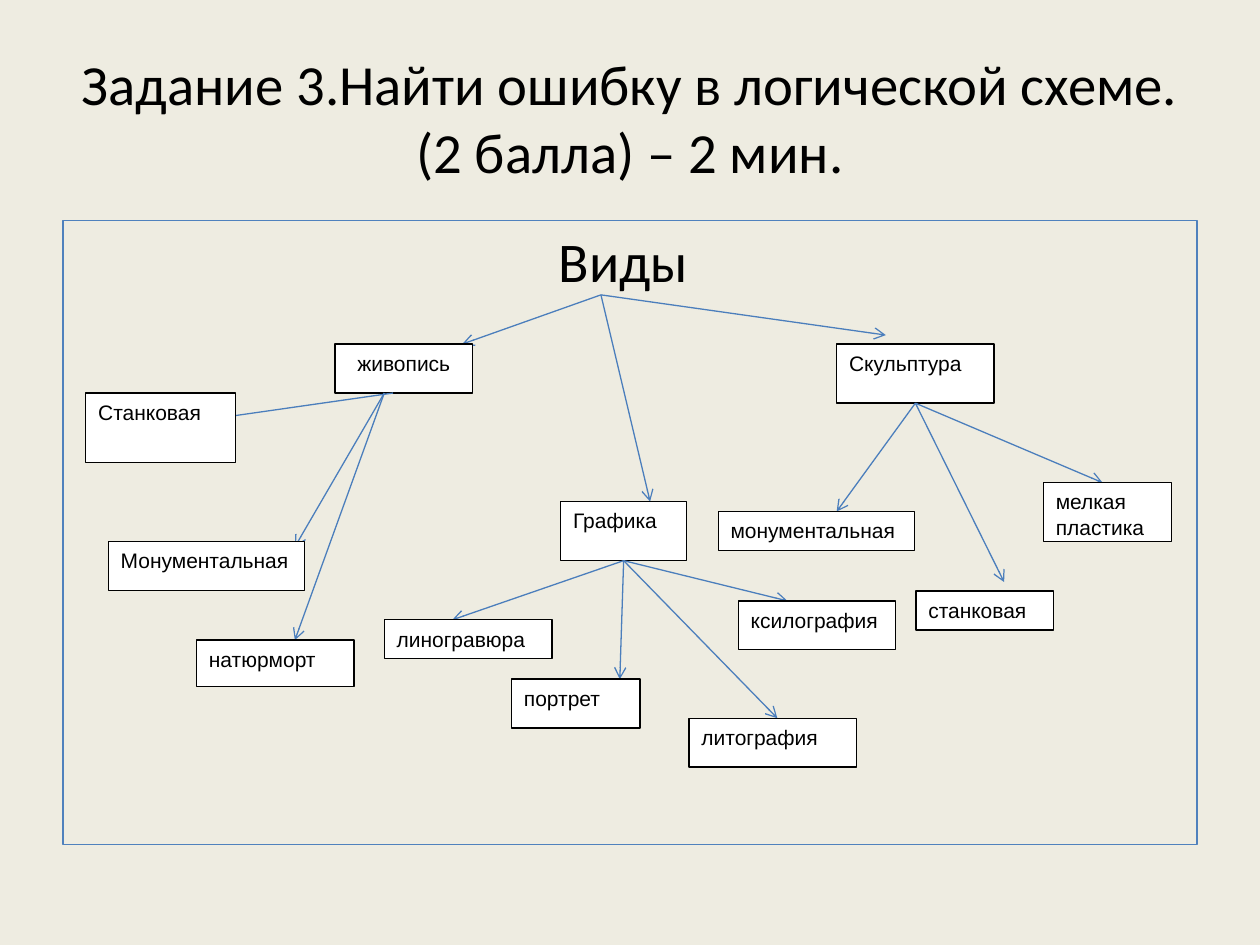
from dataclasses import dataclass

from lxml.etree import SubElement
from pptx import Presentation
from pptx.dml.color import RGBColor
from pptx.enum.shapes import MSO_CONNECTOR as Connector, MSO_SHAPE as Shape
from pptx.enum.text import MSO_ANCHOR as Anchor, MSO_AUTO_SIZE as AutoSize, PP_ALIGN as Align
from pptx.oxml.ns import qn
from pptx.util import Pt


@dataclass(frozen=True)
class Theme:
    """Colours, fonts and sizes of the slide."""
    background: RGBColor = RGBColor(0xEE, 0xEC, 0xE1)
    ink: RGBColor = RGBColor(0, 0, 0)
    paper: RGBColor = RGBColor(0xFF, 0xFF, 0xFF)
    frame: RGBColor = RGBColor(0x4F, 0x81, 0xBD)
    arrow: RGBColor = RGBColor(0x4B, 0x7E, 0xBC)
    heading_font: str = "Calibri"
    label_font: str = "Arial"
    title_size: float = 32.4
    heading_size: float = 32
    label_size: float = 12
    line_width: float = 0.75


@dataclass(frozen=True)
class Node:
    """A labelled box, the tip of the arrow to it and, if off centre, that arrow's start."""
    label: str
    box: tuple
    tip: tuple
    start: tuple = None
    align: Align = Align.LEFT


THEME = Theme()
ROOT = (307.4, 42.5)
PAINTING_START = (183.6, 98.6)
TREE = [
    (Node("живопись", (155.5, 70.6, 78.5, 28), (228.2, 70.6), ROOT, Align.CENTER), [
        Node("Станковая", (13, 98.6, 85.7, 39.6), (87.8, 113), (188.6, 98.6)),
        Node("Монументальная", (25.9, 183.6, 112.3, 28), (132.5, 186.5), PAINTING_START),
        Node("натюрморт", (76.3, 239.8, 90, 26.6), (132.5, 239.8), PAINTING_START),
    ]),
    (Node("Графика", (284.4, 160.6, 72, 33.8), (335.5, 160.6), ROOT), [
        Node("линогравюра", (183.6, 228.2, 95.8, 22.3), (222.5, 228.2)),
        Node("портрет", (256.3, 262.1, 73.4, 28), (318.2, 262.1)),
        Node("литография", (357.8, 284.4, 95.8, 28), (408.2, 284.4)),
        Node("ксилография", (385.9, 217.4, 90, 28), (414, 217.4)),
    ]),
    (Node("Скульптура", (442.1, 70.6, 90, 33.8), (470.2, 65.5), ROOT), [
        Node("монументальная", (374.4, 166.3, 112.3, 22.3), (442.1, 166.3)),
        Node("станковая", (487.4, 211.7, 78.5, 22.3), (537.8, 206.6)),
        Node("мелкая пластика", (560.2, 149.8, 73.4, 33.8), (594, 149.8)),
    ]),
]


def add_text(paragraph, text, font, size, align):
    """Add one formatted run to an aligned paragraph."""
    paragraph.alignment = align
    run = paragraph.add_run()
    run.text = text
    run.font.name = font
    run.font.size = Pt(size)
    run.font.color.rgb = THEME.ink


def add_title(slide, box, lines):
    """Place the title placeholder in the box and fill it line by line."""
    title = slide.shapes.title
    title.left, title.top, title.width, title.height = map(Pt, box)
    frame = title.text_frame
    frame.word_wrap = True
    frame.auto_size = AutoSize.NONE
    frame.vertical_anchor = Anchor.MIDDLE
    paragraph = frame.paragraphs[0]
    for index, line in enumerate(lines):
        if index:
            paragraph.add_line_break()
        add_text(paragraph, line, THEME.heading_font, THEME.title_size, Align.CENTER)


def add_arrow(slide, start, tip):
    """Draw an open-headed arrow between two points."""
    arrow = slide.shapes.add_connector(Connector.STRAIGHT, *map(Pt, (*start, *tip)))
    arrow.line.color.rgb = THEME.arrow
    arrow.line.width = Pt(THEME.line_width)
    SubElement(arrow.line._get_or_add_ln(), qn("a:tailEnd"), type="arrow")
    SubElement(arrow._element.spPr, qn("a:effectLst"))
    return arrow


def add_node(slide, origin, node):
    """Draw a labelled white box."""
    left, top, width, height = node.box
    box = (origin[0] + left, origin[1] + top, width, height)
    shape = slide.shapes.add_shape(Shape.RECTANGLE, *map(Pt, box))
    shape.shadow.inherit = False
    shape.fill.solid()
    shape.fill.fore_color.rgb = THEME.paper
    shape.line.color.rgb = THEME.ink
    shape.line.width = Pt(THEME.line_width)
    frame = shape.text_frame
    frame.word_wrap = True
    frame.vertical_anchor = Anchor.TOP
    add_text(frame.paragraphs[0], node.label, THEME.label_font, THEME.label_size, node.align)
    return shape


def add_branch(slide, origin, node, parent=None):
    """Draw the arrow to a node, joined to its parent when centred, and then the node."""
    def place(point):
        return origin[0] + point[0], origin[1] + point[1]

    arrow = add_arrow(slide, place(node.start or node.tip), place(node.tip))
    if node.start is None:
        arrow.begin_connect(parent, 2)
    return add_node(slide, origin, node)


def add_diagram(slide, box, heading, tree):
    """Draw the framed tree of kinds inside the box."""
    panel = slide.shapes.add_textbox(*map(Pt, box))
    panel.line.color.rgb = THEME.frame
    panel.line.width = Pt(THEME.line_width)
    panel.text_frame.word_wrap = True
    add_text(panel.text_frame.paragraphs[0], heading,
             THEME.heading_font, THEME.heading_size, Align.CENTER)
    origin = box[:2]
    for category, leaves in tree:
        parent = add_branch(slide, origin, category)
        for leaf in leaves:
            add_branch(slide, origin, leaf, parent)


def main():
    """Build the slide and save it."""
    presentation = Presentation()
    presentation.slide_width, presentation.slide_height = Pt(720), Pt(540)
    slide = presentation.slides.add_slide(presentation.slide_layouts[5])
    slide.background.fill.solid()
    slide.background.fill.fore_color.rgb = THEME.background
    add_title(slide, (36, 21.6, 648, 90),
              ["Задание 3.Найти ошибку в логической схеме.", "(2 балла) – 2 мин."])
    add_diagram(slide, (36, 126, 648, 356.4), "Виды ", TREE)
    presentation.save("out.pptx")


if __name__ == "__main__":
    main()
